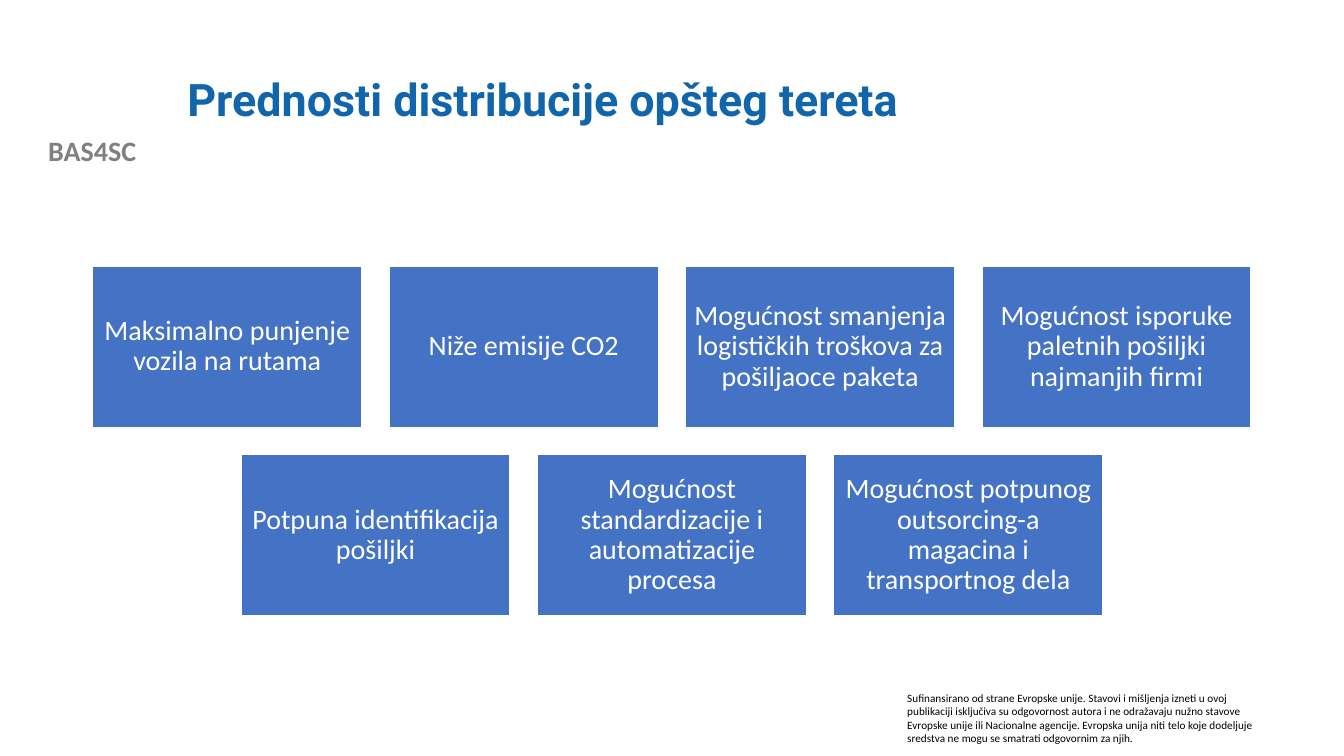
from pptx import Presentation
from pptx.dml.color import RGBColor
from pptx.enum.shapes import MSO_SHAPE as Shape
from pptx.enum.text import MSO_ANCHOR as Anchor, PP_ALIGN as Align
from pptx.util import Inches, Pt

PAGE_WIDTH, PAGE_HEIGHT = 13.33, 7.5
CARD_WIDTH, CARD_HEIGHT, CARD_GAP = 2.67, 1.6, 0.27
CARDS_TOP = 2.64

ADVANTAGES = [
    [
        "Maksimalno punjenje vozila na rutama",
        "Niže emisije CO2",
        "Mogućnost smanjenja logističkih troškova za pošiljaoce paketa",
        "Mogućnost isporuke paletnih pošiljki najmanjih firmi",
    ],
    [
        "Potpuna identifikacija pošiljki",
        "Mogućnost standardizacije i automatizacije procesa",
        "Mogućnost potpunog outsorcing-a magacina i transportnog dela",
    ],
]
FUNDING_NOTE = (
    "Sufinansirano od strane Evropske unije. Stavovi i mišljenja izneti u ovoj "
    "publikaciji isključiva su odgovornost autora i ne odražavaju nužno stavove "
    "Evropske unije ili Nacionalne agencije. Evropska unija niti telo koje dodeljuje "
    "sredstva ne mogu se smatrati odgovornim za njih."
)

PROJECT_FONT = {"name": "Calibri", "size": Pt(20), "bold": True}
NOTE_FONT = {"name": "Calibri", "size": Pt(8)}
TITLE_FONT = {"name": "Roboto", "size": Pt(32), "bold": True}
CARD_FONT = {"name": "Calibri", "size": Pt(20)}


def color(value):
    return RGBColor.from_string(value)


def set_values(target, values):
    for name, value in values.items():
        setattr(target, name, value)


def write(box, text, font, text_color, layout, anchor=Anchor.TOP):
    frame = box.text_frame
    frame.word_wrap = True
    frame.vertical_anchor = anchor
    para = frame.paragraphs[0]
    set_values(para, layout)
    span = para.add_run()
    span.text = text
    set_values(span.font, font)
    span.font.color.rgb = color(text_color)


def add_text(page, area, *content):
    box = page.shapes.add_textbox(*map(Inches, area))
    write(box, *content)


def add_card(page, left, top, text):
    area = (left, top, CARD_WIDTH, CARD_HEIGHT)
    card = page.shapes.add_shape(Shape.RECTANGLE, *map(Inches, area))
    card.shadow.inherit = False
    card.fill.solid()
    card.fill.fore_color.rgb = color("4472C4")
    card.line.color.rgb = color("FFFFFF")
    card.line.width = Pt(1)
    sides = ("left", "top", "right", "bottom")
    set_values(card.text_frame, {f"margin_{side}": Inches(0.08) for side in sides})
    layout = {"alignment": Align.CENTER, "line_spacing": 0.9}
    write(card, text, CARD_FONT, "FFFFFF", layout, Anchor.MIDDLE)


def add_card_rows(page, rows):
    for row, texts in enumerate(rows):
        row_width = len(texts) * (CARD_WIDTH + CARD_GAP) - CARD_GAP
        row_left = (PAGE_WIDTH - row_width) / 2
        top = CARDS_TOP + row * (CARD_HEIGHT + CARD_GAP)
        for column, text in enumerate(texts):
            add_card(page, row_left + column * (CARD_WIDTH + CARD_GAP), top, text)


def main():
    deck = Presentation()
    deck.slide_width = Inches(PAGE_WIDTH)
    deck.slide_height = Inches(PAGE_HEIGHT)
    page = deck.slides.add_slide(deck.slide_layouts[6])
    add_text(page, (0, 1.28, 1.83, 0.44), "BAS4SC", PROJECT_FONT, "808080",
             {"alignment": Align.CENTER})
    add_text(page, (8.9, 6.81, 3.7, 0.64), FUNDING_NOTE, NOTE_FONT, "000000", {})
    add_text(page, (1.76, 0.4, 10.66, 1.22), "Prednosti distribucije opšteg tereta",
             TITLE_FONT, "1065AB", {"line_spacing": 0.9}, Anchor.MIDDLE)
    add_card_rows(page, ADVANTAGES)
    deck.save("out.pptx")


if __name__ == "__main__":
    main()
